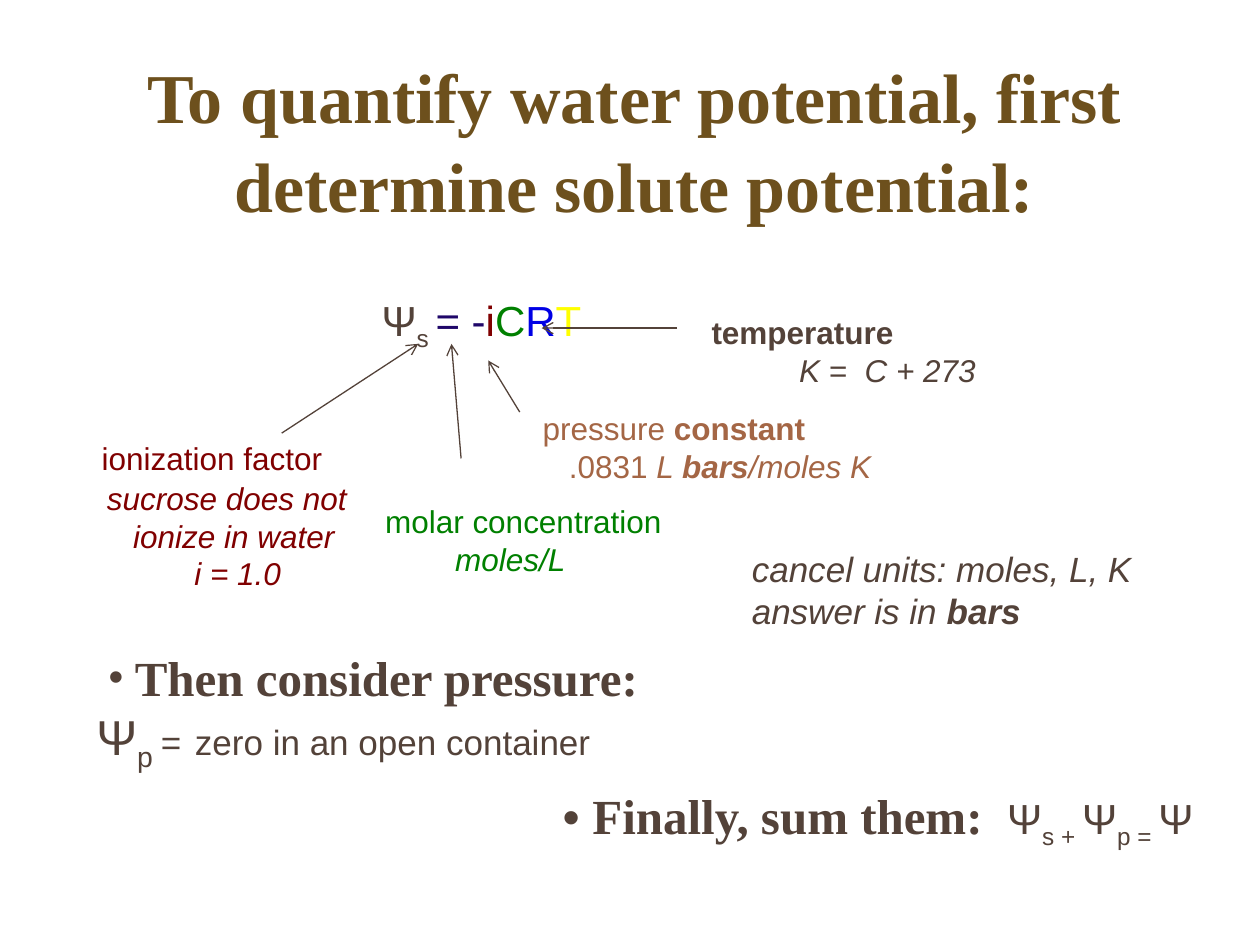
import dataclasses

import pptx
import pptx.dml.color
import pptx.enum.shapes
import pptx.enum.text
import pptx.oxml
import pptx.oxml.ns
import pptx.util

Pt = pptx.util.Pt


@dataclasses.dataclass(frozen=True)
class Theme:
    """Colours, typefaces and type sizes of the slide."""
    heading: str = "6D501D"
    text: str = "534239"
    ion: str = "800000"
    molar: str = "008000"
    pressure: str = "A46645"
    gas: str = "0000E5"
    temperature: str = "FFFF00"
    sign: str = "1F0769"
    sans: str = "Arial"
    serif: str = "Times New Roman"
    title_size: int = 40
    step_size: int = 28
    formula_size: int = 24
    note_size: int = 20
    label_size: int = 18


THEME = Theme()
BOLD = {"bold": True}
ITALIC = {"italic": True}
STEP = {"bold": True, "name": THEME.serif}
SUBSCRIPT = {"baseline": -25000}


def set_values(target, values):
    """Set each attribute of the target from a dict."""
    for name, value in values.items():
        setattr(target, name, value)


def add_run(paragraph, text, size, color, style):
    """Append one formatted run."""
    run = paragraph.add_run()
    run.text = text
    values = {"name": THEME.sans, "size": Pt(size), "bold": False, "italic": False, **style}
    baseline = values.pop("baseline", None)
    set_values(run.font, values)
    run.font.color.rgb = pptx.dml.color.RGBColor.from_string(color)
    if baseline:
        run.font._element.set("baseline", str(baseline))


def add_bullet(paragraph, left, hanging, scale):
    """Give a paragraph a hanging round bullet."""
    properties = paragraph._p.get_or_add_pPr()
    properties.set("marL", str(Pt(left)))
    properties.set("indent", str(-Pt(hanging)))
    for tag, name, value in (("buSzPct", "val", str(scale * 1000)),
                             ("buFont", "typeface", THEME.sans),
                             ("buChar", "char", "•")):
        element = pptx.oxml.parse_xml(f"<a:{tag} {pptx.oxml.ns.nsdecls('a')}/>")
        element.set(name, value)
        properties.append(element)


def add_text(slide, box, lines, size, color, margins=None):
    """Place a text box of lines, each an indent followed by its runs."""
    shape = slide.shapes.add_textbox(*map(Pt, box))
    frame = shape.text_frame
    set_values(frame, {"word_wrap": True, "auto_size": pptx.enum.text.MSO_AUTO_SIZE.NONE,
                       **(margins or {})})
    for index, (indent, *runs) in enumerate(lines):
        paragraph = frame.add_paragraph() if index else frame.paragraphs[0]
        if isinstance(indent, tuple):
            add_bullet(paragraph, *indent)
        elif indent:
            paragraph._p.get_or_add_pPr().set("marL", str(Pt(indent)))
        for text, style in runs:
            style = dict(style)
            add_run(paragraph, text, style.pop("points", size), style.pop("color", color), style)


def add_arrow(slide, start, end):
    """Draw a thin line with an open arrowhead at its end."""
    line = slide.shapes.add_connector(pptx.enum.shapes.MSO_CONNECTOR.STRAIGHT,
                                      *map(Pt, start + end))
    line.line.width = Pt(0.75)
    line.line.color.rgb = pptx.dml.color.RGBColor.from_string(THEME.text)
    namespace = pptx.oxml.ns.nsdecls("a")
    line.line._get_or_add_ln().append(
        pptx.oxml.parse_xml(f'<a:tailEnd {namespace} type="arrow"/>'))
    line._element.spPr.append(pptx.oxml.parse_xml(f"<a:effectLst {namespace}/>"))


def place_title(slide, box):
    """Move and format the title placeholder."""
    title = slide.shapes.title
    set_values(title, dict(zip(("left", "top", "width", "height"), map(Pt, box))))
    set_values(title.text_frame, {
        "word_wrap": True, "auto_size": pptx.enum.text.MSO_AUTO_SIZE.NONE,
        "vertical_anchor": pptx.enum.text.MSO_ANCHOR.MIDDLE, "margin_bottom": Pt(46)})
    paragraph = title.text_frame.paragraphs[0]
    set_values(paragraph, {"alignment": pptx.enum.text.PP_ALIGN.CENTER, "line_spacing": 1.05})
    add_run(paragraph, "To quantify water potential, first determine solute potential:",
            THEME.title_size, THEME.heading, STEP)


def place_formula(slide, box):
    """Place the solute potential formula with one colour for each factor."""
    factors = (("= -", THEME.sign), ("i", THEME.ion), ("C", THEME.molar),
               ("R", THEME.gas), ("T", THEME.temperature))
    runs = [("Ψ", {}), ("s ", SUBSCRIPT)]
    runs += [(text, {"color": color}) for text, color in factors]
    add_text(slide, box, [(0, *runs)], THEME.formula_size, THEME.text,
             {"margin_left": Pt(187), "margin_top": Pt(34.5)})


def place_factors(slide, box):
    """Place the label of each factor and the arrows to the formula."""
    left, top, _, _ = box
    labels = (
        ((0, 72, 142, 78), THEME.ion, [(0, ("ionization factor", {}))]),
        ((162, 108, 174, 51), THEME.molar,
         [(0, ("molar concentration", {})), (40, ("moles/L", ITALIC))]),
        ((252, 54.5, 203, 51), THEME.pressure,
         [(0, ("pressure ", {}), ("constant", BOLD)),
          (15, (".0831 ", {}), ("L ", ITALIC), ("bars", {**BOLD, **ITALIC}),
           ("/moles K", ITALIC))]),
        ((348.5, 0, 167, 51), THEME.text,
         [(0, ("temperature", BOLD)), (50, ("K =  C + 273", ITALIC))]),
        ((3, 94.5, 157, 73), THEME.ion,
         [(0, ("sucrose does not", ITALIC)), (15, ("ionize in water", ITALIC)),
          (50, ("i = 1.0", ITALIC))]))
    for (x, y, width, height), color, lines in labels:
        add_text(slide, (left + x, top + y, width, height), lines, THEME.label_size, color)
    arrows = (((110, 72), (188, 21)), ((212.5, 86.5), (207, 21)),
              ((246, 60), (228, 30.5)), ((336, 12), (258.5, 12)))
    for start, end in arrows:
        add_arrow(slide, *((left + x, top + y) for x, y in (start, end)))


def place_units(slide, box):
    """Place the note on units."""
    add_text(slide, box, [(0, ("cancel units: moles, L, K", ITALIC)),
                          (0, ("answer is in ", ITALIC), ("bars", {**BOLD, **ITALIC}))],
             THEME.note_size, THEME.text)


def place_pressure(slide, box):
    """Place the pressure step and its value."""
    note = {"points": THEME.note_size}
    add_text(slide, box, [
        ((22, 15, 86), ("Then consider pressure:", STEP)),
        (0, ("Ψ", {}), ("p ", SUBSCRIPT), ("=", note), (" ", {}),
         ("zero in an open container", note))], THEME.step_size, THEME.text)


def place_sum(slide, box):
    """Place the final step with the sum of both potentials."""
    add_text(slide, box, [
        ((17, 17, 100), ("Finally, sum them:  ", {**STEP, "points": THEME.step_size}),
         ("Ψ", {}), ("s + ", SUBSCRIPT), ("Ψ", {}), ("p = ", SUBSCRIPT), ("Ψ", {}))],
        THEME.formula_size, THEME.text)


def main():
    """Build and save the slide."""
    presentation = pptx.Presentation()
    set_values(presentation, {"slide_width": Pt(720), "slide_height": Pt(540)})
    slide = presentation.slides.add_slide(presentation.slide_layouts[5])
    place_title(slide, (65.5, 71.5, 594, 57))
    place_formula(slide, (31, 134, 564, 94))
    place_factors(slide, (51, 175.5, 516, 168))
    place_units(slide, (422.5, 309.5, 306, 55.5))
    place_pressure(slide, (48, 366.5, 374.5, 75))
    place_sum(slide, (314.5, 445.5, 384.5, 70.5))
    presentation.save("out.pptx")


if __name__ == "__main__":
    main()
